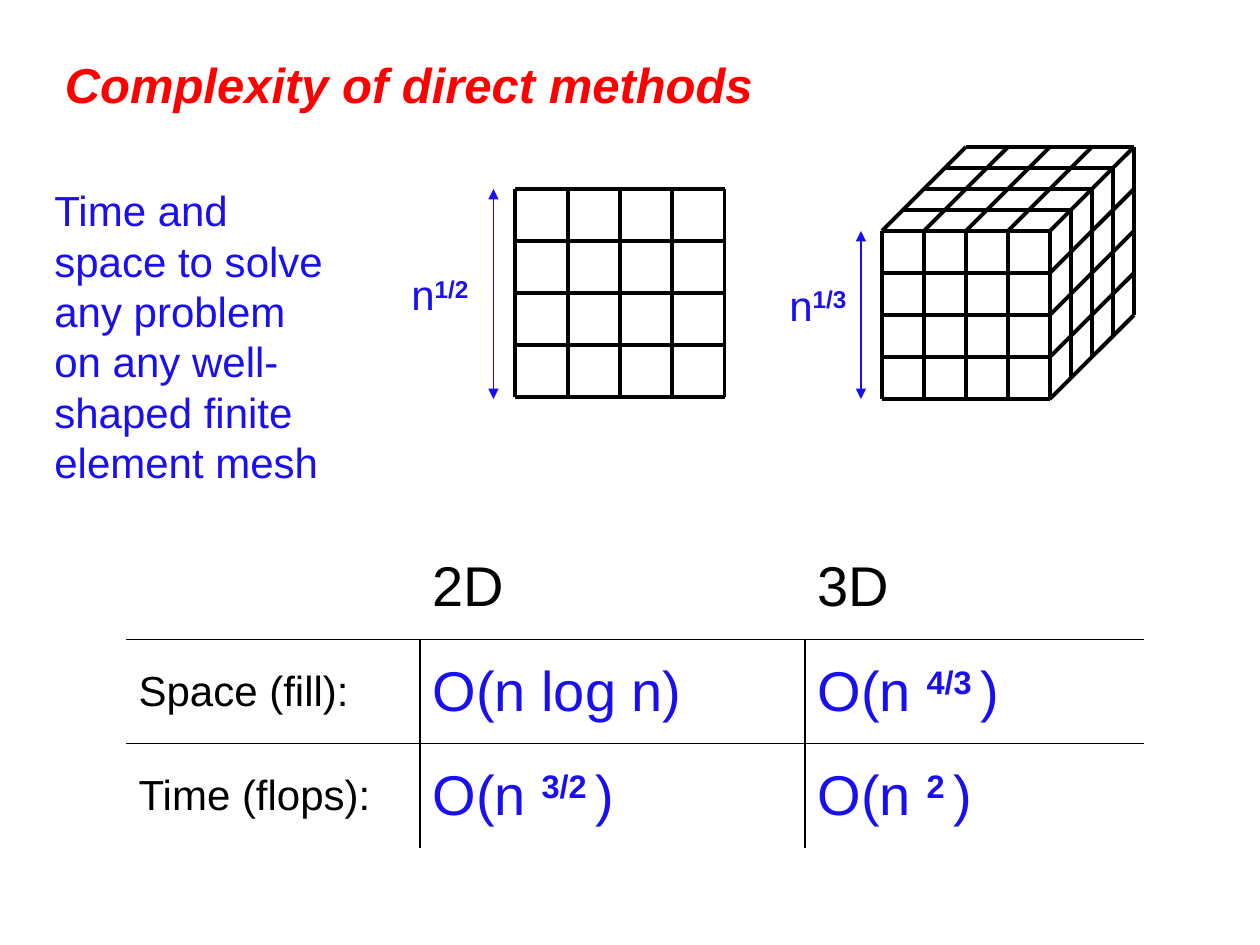
from lxml.etree import SubElement
from pptx import Presentation
from pptx.dml.color import RGBColor
from pptx.enum.shapes import MSO_CONNECTOR
from pptx.enum.text import MSO_ANCHOR
from pptx.oxml.ns import qn
from pptx.util import Pt

color = RGBColor.from_string
BLACK, BLUE, RED = "000000", "1A0FEF", "FF0000"

presentation = Presentation()
presentation.slide_width, presentation.slide_height = Pt(720), Pt(540)
slide = presentation.slides.add_slide(presentation.slide_layouts[6])


def write_text(frame, text, size=24, fill=BLUE, bold=False, italic=False, wrap=True):
    """Write one paragraph; parts between ^ marks become bold superscripts."""
    frame.word_wrap = wrap
    paragraph = frame.paragraphs[0]
    for index, part in enumerate(text.split("^")):
        raised = index % 2 == 1
        run = paragraph.add_run()
        run.text = part
        run.font.name, run.font.size = "Arial", Pt(size)
        run.font.bold, run.font.italic = bold or raised, italic
        run.font.color.rgb = color(fill)
        if raised:
            run.font._element.set("baseline", "30000")


def add_line(x1, y1, x2, y2, fill=BLACK, width=2.25, arrows=False):
    line = slide.shapes.add_connector(MSO_CONNECTOR.STRAIGHT, Pt(x1), Pt(y1), Pt(x2), Pt(y2))
    line.line.color.rgb = color(fill)
    line.line.width = Pt(width)
    if arrows:
        for end in ("a:headEnd", "a:tailEnd"):
            SubElement(line.line._get_or_add_ln(), qn(end), type="triangle")
    SubElement(line._element.spPr, qn("a:effectLst"))


# Title
title = slide.shapes.add_textbox(Pt(30), Pt(24), Pt(672), Pt(48))
title.text_frame.vertical_anchor = MSO_ANCHOR.MIDDLE
write_text(title.text_frame, "Complexity of direct methods", size=28, fill=RED, bold=True, italic=True)

# Meshes: each face has a corner and two edge vectors, cut into four cells per edge
CELLS = 4
faces = [
    ((294.5, 108), (119.5, 0), (0, 119)),  # square
    ((504, 132), (96, 0), (0, 96)),        # cube front
    ((504, 132), (96, 0), (48, -48)),      # cube top
    ((600, 132), (0, 96), (48, -48)),      # cube side
]
drawn = set()  # neighbouring faces share an edge, which is drawn once
for (x, y), first_edge, second_edge in faces:
    for along, across in ((first_edge, second_edge), (second_edge, first_edge)):
        for step in range(CELLS + 1):
            start_x = x + across[0] * step / CELLS
            start_y = y + across[1] * step / CELLS
            segment = (start_x, start_y, start_x + along[0], start_y + along[1])
            if segment not in drawn:
                add_line(*segment)
                drawn.add(segment)

# Side lengths of the meshes
for text, left, top, arrow_x, arrow_top in (
    ("n^1/2", 228, 150, 282, 108),
    ("n^1/3", 444, 156, 492, 132),
):
    label = slide.shapes.add_textbox(Pt(left), Pt(top), Pt(50), Pt(36))
    write_text(label.text_frame, text, wrap=False)
    add_line(arrow_x, 228, arrow_x, arrow_top, fill=BLUE, width=1, arrows=True)

# Complexity table
rows = [
    ["", "2D", "3D"],
    ["Space (fill):", "O(n log n)", "O(n ^4/3 ^)"],
    ["Time (flops):", "O(n ^3/2 ^)", "O(n ^2 ^)"],
]
column_widths = [168, 220, 194]
row_height = 59.5
table = slide.shapes.add_table(
    len(rows), len(column_widths), Pt(72), Pt(306), Pt(sum(column_widths)), Pt(row_height * len(rows))
).table
table.first_row = table.horz_banding = False
for column, width in zip(table.columns, column_widths):
    column.width = Pt(width)

for r, texts in enumerate(rows):
    for c, text in enumerate(texts):
        cell = table.cell(r, c)
        cell.vertical_anchor = MSO_ANCHOR.MIDDLE
        if text:
            write_text(cell.text_frame, text, size=32 if c else 24, fill=BLUE if r and c else BLACK)
        # Only inner borders are ruled, and none between the header cells
        borders = {
            "a:lnL": r > 0 and c > 0,
            "a:lnR": r > 0 and c < len(texts) - 1,
            "a:lnT": r > 0,
            "a:lnB": r < len(rows) - 1,
        }
        for tag, ruled in borders.items():
            border = SubElement(cell._tc.get_or_add_tcPr(), qn(tag), w=str(Pt(1)))
            if ruled:
                SubElement(SubElement(border, qn("a:solidFill")), qn("a:srgbClr"), val=BLACK)
            else:
                SubElement(border, qn("a:noFill"))
        cell.fill.background()

# Problem statement
statement = slide.shapes.add_textbox(Pt(24), Pt(102), Pt(174), Pt(180))
write_text(
    statement.text_frame,
    "Time and space to solve any problem on any well-shaped finite element mesh",
)

presentation.save("out.pptx")
